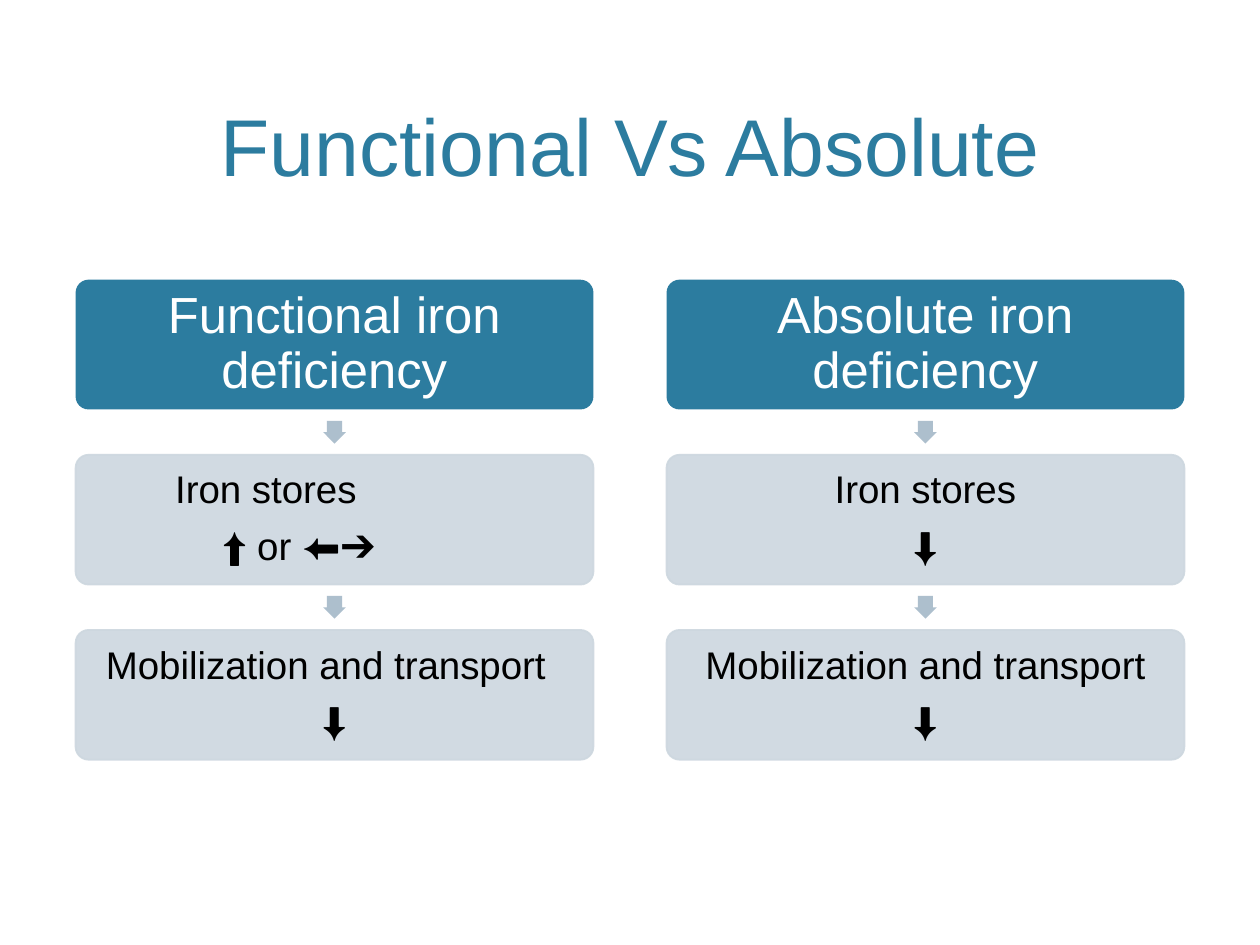
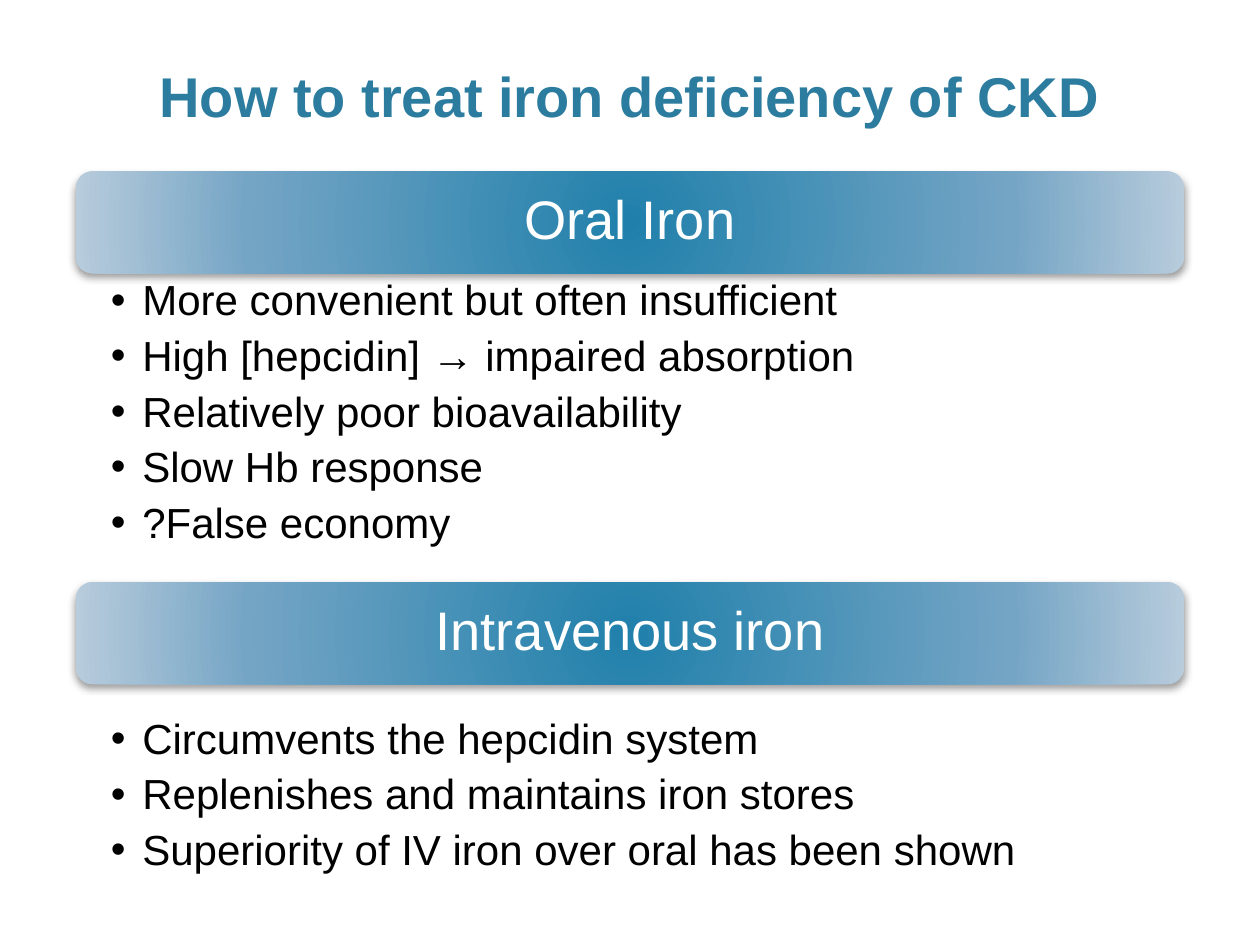
import dataclasses

import lxml.etree
import pptx
import pptx.dml.color
import pptx.enum.shapes
import pptx.enum.text
import pptx.oxml.ns
import pptx.util

Inches = pptx.util.Inches
Pt = pptx.util.Pt
qn = pptx.oxml.ns.qn
SHAPE = pptx.enum.shapes.MSO_SHAPE
ALIGN = pptx.enum.text.PP_ALIGN
ANCHOR = pptx.enum.text.MSO_ANCHOR


@dataclasses.dataclass(frozen=True)
class Theme:
    """Hold the colours, type sizes and margins that the slides share."""
    font: str = "Arial"
    blue: str = "2C7C9F"
    pale: str = "CDD7DF"
    arrow: str = "ADBFCD"
    white: str = "FFFFFF"
    black: str = "000000"
    stops: tuple = ((0, "2080AB"), (69, "75A5C5"), (100, "B8CCDC"))
    title: int = 46
    bold: int = 32
    head: int = 29
    step: int = 22
    band: int = 31
    list: int = 24
    left: float = 0.6
    width: float = 8.8


THEME = Theme()
CARD_W, CARD_H = 4.11, 1.03
ROW_TOP, ROW_GAP = 2.22, 1.39
COL_GAP = THEME.width - CARD_W
ARROW = 0.18

FLOWS = [
    ("Functional iron deficiency",
     [[("Iron stores", 0.7), ("⬆ or ⬅➔", 1.08)],
      [("Mobilization and transport", 0.15), ("⬇", None)]]),
    ("Absolute iron deficiency",
     [[("Iron stores", None), ("⬇", None)],
      [("Mobilization and transport", None), ("⬇", None)]]),
]
PARTS = [
    ("Oral Iron", 1.36, 2.18, 2.67,
     ["More convenient but often insufficient",
      "High [hepcidin] → impaired absorption",
      "Relatively poor bioavailability",
      "Slow Hb response",
      "?False economy"]),
    ("Intravenous iron", 4.62, 5.66, 1.33,
     ["Circumvents the hepcidin system",
      "Replenishes and maintains iron stores",
      "Superiority of IV iron over oral has been shown"]),
]


def rgb(code):
    """Turn a hex code into a colour."""
    return pptx.dml.color.RGBColor.from_string(code)


def add_node(node, tag, **attrs):
    """Add a drawing element with its attributes and return it."""
    child = lxml.etree.SubElement(node, qn(tag))
    for key, value in attrs.items():
        child.set(key, str(value))
    return child


def set_frame(shape, anchor, sides, ends):
    """Set wrap, anchor and insets of a text frame and return it."""
    frame = shape.text_frame
    frame.word_wrap = True
    frame.vertical_anchor = anchor
    frame.margin_left, frame.margin_right = map(Inches, sides)
    frame.margin_top = frame.margin_bottom = Inches(ends)
    return frame


def write(frame, lines, size, colour, bold=False, gap=0, space=0.9, align=ALIGN.CENTER):
    """Fill a frame with styled lines, with a gap between them."""
    frame.text = "\n".join(lines)
    for para in frame.paragraphs:
        para.alignment = align
        para.line_spacing = space
        for run in para.runs:
            run.font.name = THEME.font
            run.font.size = Pt(size)
            run.font.bold = bold
            run.font.color.rgb = rgb(colour)
    for para in frame.paragraphs[:-1]:
        para.space_after = Pt(gap)


def add_box(slide, left, top, width, height):
    """Add an empty text box."""
    return slide.shapes.add_textbox(*map(Inches, (left, top, width, height)))


def add_title(slide, text, height, size, bold=False):
    """Add the slide title, set on the bottom of its box."""
    box = add_box(slide, THEME.left, 0.12, THEME.width, height)
    frame = set_frame(box, ANCHOR.BOTTOM, (0.1, 0.1), 0.05)
    write(frame, [text], size, THEME.blue, bold, space=1.0)


def add_form(slide, kind, left, top, width, height, fill, adjust=()):
    """Add a plain shape with a solid fill and no line or shadow."""
    shape = slide.shapes.add_shape(kind, *map(Inches, (left, top, width, height)))
    shape.shadow.inherit = False
    shape.fill.solid()
    shape.fill.fore_color.rgb = rgb(fill)
    shape.line.fill.background()
    for place, value in enumerate(adjust):
        shape.adjustments[place] = value
    return shape


def add_card(slide, left, top, fill):
    """Add a rounded card and return it."""
    return add_form(slide, SHAPE.ROUNDED_RECTANGLE, left, top, CARD_W, CARD_H, fill, [0.1])


def add_head(slide, left, text):
    """Add the dark card that heads a flow."""
    card = add_card(slide, left, ROW_TOP, THEME.blue)
    frame = set_frame(card, ANCHOR.MIDDLE, (0.07, 0.07), 0.07)
    write(frame, [text], THEME.head, THEME.white)


def add_step(slide, left, top, lines):
    """Add a pale card whose lines are centred or indented."""
    card = add_card(slide, left, top, THEME.pale)
    card.line.color.rgb = rgb(THEME.pale)
    card.line.width = Pt(1)
    for colour in card.element.spPr.iter(qn("a:srgbClr")):
        add_node(colour, "a:alpha", val=90000)
    frame = set_frame(card, ANCHOR.MIDDLE, (0.06, 0.06), 0.06)
    write(frame, [text for text, _ in lines], THEME.step, THEME.black, gap=8.5)
    for para, (_, indent) in zip(frame.paragraphs, lines):
        if indent is not None:
            para.alignment = ALIGN.LEFT
            para._p.get_or_add_pPr().set("marL", str(Inches(indent)))


def add_flow(slide, left, head, steps):
    """Add a head card and its steps, with an arrow before each step."""
    add_head(slide, left, head)
    for row, lines in enumerate(steps, 1):
        top = ROW_TOP + row * ROW_GAP
        add_form(slide, SHAPE.DOWN_ARROW, left + (CARD_W - ARROW) / 2,
                 top - (ROW_GAP - CARD_H + ARROW) / 2, ARROW, ARROW,
                 THEME.arrow, [0.667, 0.5])
        add_step(slide, left, top, lines)


def add_band(slide, top, text):
    """Add a wide band with a round gradient and a soft shadow."""
    band = add_form(slide, SHAPE.ROUNDED_RECTANGLE, THEME.left, top,
                    THEME.width, 0.81, THEME.blue)
    props = band.element.spPr
    grad = lxml.etree.Element(qn("a:gradFill"), rotWithShape="1")
    stops = add_node(grad, "a:gsLst")
    for place, code in THEME.stops:
        stop = add_node(stops, "a:gs", pos=place * 1000)
        add_node(stop, "a:srgbClr", val=code)
    round_fill = add_node(grad, "a:path", path="circle")
    add_node(round_fill, "a:fillToRect", **dict.fromkeys("ltrb", 100000))
    props.replace(props.find(qn("a:solidFill")), grad)
    shade = add_node(props.find(qn("a:effectLst")), "a:outerShdw", blurRad=Pt(5),
                     dist=Pt(2), dir=5400000, rotWithShape=0)
    colour = add_node(shade, "a:srgbClr", val=THEME.black)
    add_node(colour, "a:alpha", val=40000)
    frame = set_frame(band, ANCHOR.MIDDLE, (0.17, 0.17), 0.17)
    write(frame, [text], THEME.band, THEME.white)


def add_list(slide, top, height, lines):
    """Add a bullet list."""
    box = add_box(slide, THEME.left, top, THEME.width, height)
    frame = set_frame(box, ANCHOR.TOP, (0.28, 0.24), 0.04)
    write(frame, lines, THEME.list, THEME.black, gap=5.8, align=ALIGN.LEFT)
    for para in frame.paragraphs:
        props = para._p.get_or_add_pPr()
        props.set("marL", str(Inches(0.25)))
        props.set("indent", str(Inches(-0.25)))
        add_node(props, "a:buFont", typeface=THEME.font)
        add_node(props, "a:buChar", char="•")


def main():
    """Build both slides and save them."""
    deck = pptx.Presentation()
    deck.slide_width, deck.slide_height = Inches(10), Inches(7.5)
    blank = deck.slide_layouts[6]

    slide = deck.slides.add_slide(blank)
    add_title(slide, "Functional Vs Absolute", 1.46, THEME.title)
    for col, (head, steps) in enumerate(FLOWS):
        add_flow(slide, THEME.left + col * COL_GAP, head, steps)

    slide = deck.slides.add_slide(blank)
    add_title(slide, "How to treat iron deficiency of CKD", 0.95, THEME.bold, True)
    for text, band_top, list_top, height, lines in PARTS:
        add_band(slide, band_top, text)
        add_list(slide, list_top, height, lines)

    deck.save("out.pptx")


if __name__ == "__main__":
    main()
